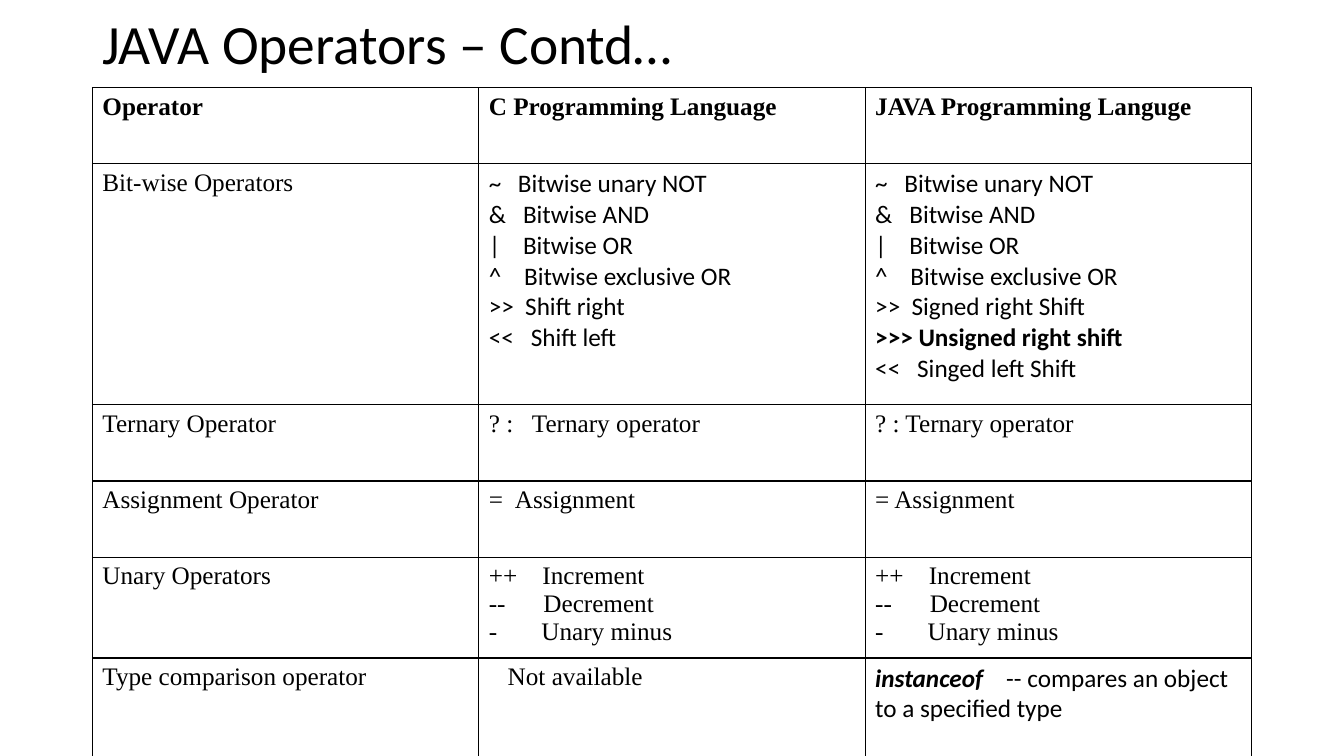
from dataclasses import dataclass

from lxml import etree
from pptx import Presentation
from pptx.dml.color import RGBColor
from pptx.enum.text import MSO_ANCHOR
from pptx.oxml.ns import qn
from pptx.util import Pt


@dataclass(frozen=True)
class Theme:
    ink: str = "000000"
    sans: str = "Calibri"
    serif: str = "Times New Roman"
    title_size: float = 39.6
    body_size: float = 18
    border: float = 1


@dataclass(frozen=True)
class Line:
    text: str
    lead: str = ""        # bold italic opening word
    tab: float = 0        # where the meaning starts after the symbol
    indent: float = 0
    sans: bool = False
    bold: bool = False


THEME = Theme()

# Content
TITLE = "JAVA Operators – Contd…"

SHARED_BITWISE = [
    Line("~\tBitwise unary NOT", tab=20.8, sans=True),
    Line("&\tBitwise AND", tab=24.4, sans=True),
    Line("|\tBitwise OR", tab=24.4, sans=True),
    Line("^\tBitwise exclusive OR", tab=25.2, sans=True),
]
C_BITWISE = SHARED_BITWISE + [
    Line(">>\tShift right", tab=26, sans=True),
    Line("<<\tShift left", tab=30, sans=True),
]
JAVA_BITWISE = SHARED_BITWISE + [
    Line(">>\tSigned right Shift", tab=26, sans=True),
    Line(">>> Unsigned right shift", sans=True, bold=True),
    Line("<<\tSinged left Shift", tab=30, sans=True),
]
UNARY = [
    Line("++\tIncrement", tab=38.3),
    Line("--\tDecrement", tab=39),
    Line("-\tUnary minus", tab=37.5),
]
HEADINGS = ["Operator", "C Programming Language", "JAVA Programming Languge"]

# Row height, then one list of lines per column
ROWS = [
    (54.5, [[Line(heading, bold=True)] for heading in HEADINGS]),
    (172, [[Line("Bit-wise Operators")], C_BITWISE, JAVA_BITWISE]),
    (54.5, [[Line("Ternary Operator")],
            [Line("? :\tTernary operator", tab=30.8)],
            [Line("? : Ternary operator")]]),
    (54.5, [[Line("Assignment Operator")],
            [Line("=\tAssignment", tab=18.6)],
            [Line("= Assignment")]]),
    (67, [[Line("Unary Operators")], UNARY, UNARY]),
    (71, [[Line("Type comparison operator")],
          [Line("Not available", indent=13.5)],
          [Line("\t-- compares an object to a specified type",
                lead="instanceof", tab=93.6, sans=True)]]),
]

# Layout
SLIDE_WIDTH, SLIDE_HEIGHT = 960, 540
LEFT, WIDTH = 66, 828
TITLE_TOP, TITLE_HEIGHT = 8.6, 49
TABLE_TOP = 62.6


def style_font(font, name, size):
    font.name = name
    font.size = Pt(size)
    font.color.rgb = RGBColor.from_string(THEME.ink)


def write_line(paragraph, line):
    properties = paragraph._p.get_or_add_pPr()
    if line.indent:
        properties.set("marL", str(Pt(line.indent)))
        properties.set("indent", "0")
    if line.tab:
        tabs = etree.SubElement(properties, qn("a:tabLst"))
        etree.SubElement(tabs, qn("a:tab"), pos=str(Pt(line.tab)), algn="l")
    if line.lead:
        lead = paragraph.add_run()
        lead.text = line.lead
        lead.font.bold = lead.font.italic = True
    paragraph.add_run().text = line.text
    style_font(paragraph.font, THEME.sans if line.sans else THEME.serif, THEME.body_size)
    paragraph.font.bold = line.bold


def frame_cell(cell):
    properties = cell._tc.get_or_add_tcPr()
    for side in ("lnL", "lnR", "lnT", "lnB"):
        edge = etree.SubElement(properties, qn(f"a:{side}"), w=str(Pt(THEME.border)))
        fill = etree.SubElement(edge, qn("a:solidFill"))
        etree.SubElement(fill, qn("a:srgbClr"), val=THEME.ink)
    cell.fill.background()


def add_title(slide):
    box = slide.shapes.add_textbox(Pt(LEFT), Pt(TITLE_TOP), Pt(WIDTH), Pt(TITLE_HEIGHT))
    frame = box.text_frame
    frame.word_wrap = True
    frame.vertical_anchor = MSO_ANCHOR.MIDDLE
    paragraph = frame.paragraphs[0]
    paragraph.text = TITLE
    paragraph.line_spacing = 0.9
    style_font(paragraph.font, THEME.sans, THEME.title_size)


def add_operator_table(slide):
    height = sum(row_height for row_height, _ in ROWS)
    table = slide.shapes.add_table(len(ROWS), len(HEADINGS), Pt(LEFT), Pt(TABLE_TOP),
                                   Pt(WIDTH), Pt(height)).table
    table.first_row = table.horz_banding = False
    for column in table.columns:
        column.width = Pt(WIDTH / len(HEADINGS))
    for row, (row_height, cells) in zip(table.rows, ROWS):
        row.height = Pt(row_height)
        for cell, lines in zip(row.cells, cells):
            frame_cell(cell)
            frame = cell.text_frame
            for index, line in enumerate(lines):
                paragraph = frame.add_paragraph() if index else frame.paragraphs[0]
                write_line(paragraph, line)


def main():
    presentation = Presentation()
    presentation.slide_width = Pt(SLIDE_WIDTH)
    presentation.slide_height = Pt(SLIDE_HEIGHT)
    slide = presentation.slides.add_slide(presentation.slide_layouts[6])
    add_title(slide)
    add_operator_table(slide)
    presentation.save("out.pptx")


if __name__ == "__main__":
    main()
